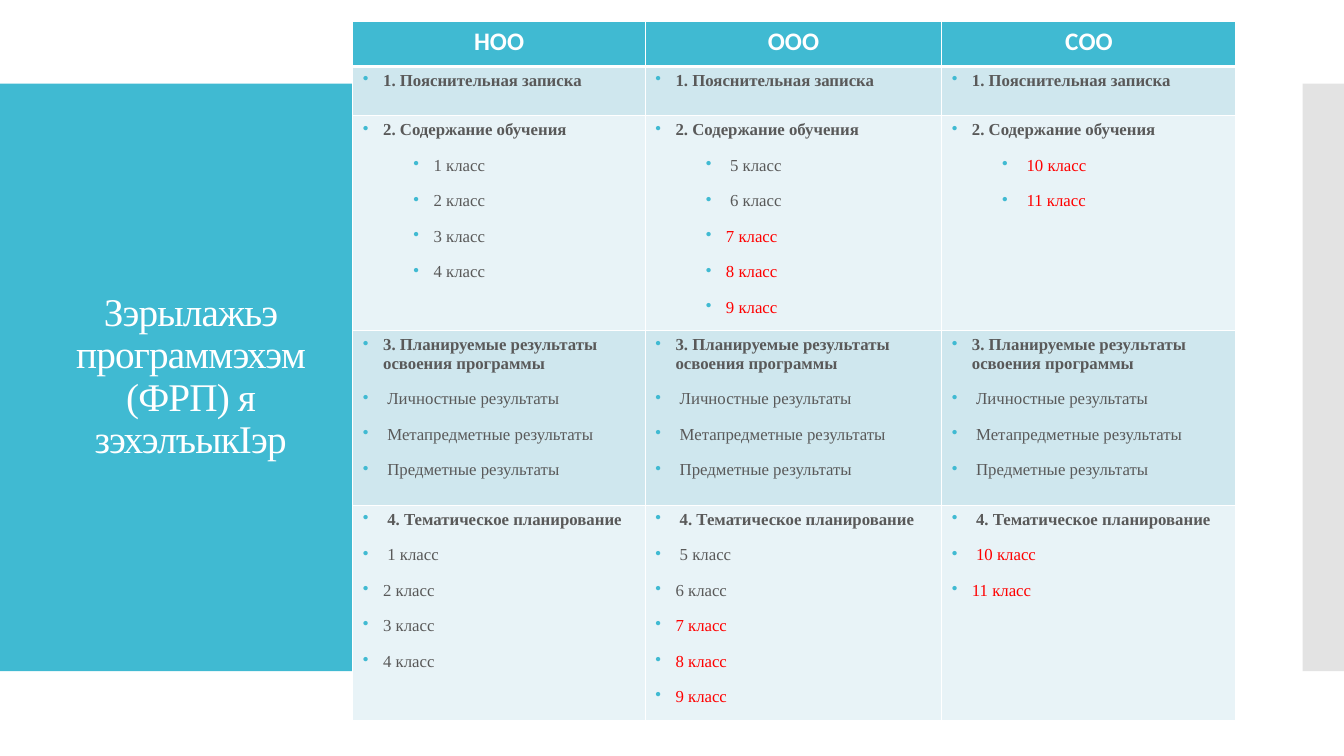
from lxml import etree
from pptx import Presentation
from pptx.dml.color import RGBColor
from pptx.enum.shapes import MSO_SHAPE
from pptx.enum.text import MSO_ANCHOR, PP_ALIGN
from pptx.oxml.ns import qn
from pptx.util import Inches, Pt

RECT = MSO_SHAPE.RECTANGLE
MIDDLE = MSO_ANCHOR.MIDDLE
CENTER = PP_ALIGN.CENTER
TEAL, WHITE, GREY, RED = "40BAD2", "FFFFFF", "595959", "FF0000"
DARK, LIGHT = "CFE7EE", "E8F3F7"
SERIF = "Times New Roman"


def color(code):
    return RGBColor.from_string(code)


def add(parent, tag, **attrs):
    """Append a DrawingML child element and return it."""
    return etree.SubElement(parent, qn("a:" + tag), attrs)


prs = Presentation()
prs.slide_width, prs.slide_height = Inches(13.33), Inches(7.5)
slide = prs.slides.add_slide(prs.slide_layouts[6])

# Side panels
for left, width, fill in [(0, 3.77, TEAL), (12.92, 0.41, "C8C8C8")]:
    panel = slide.shapes.add_shape(RECT, Inches(left), Inches(0.83), Inches(width), Inches(5.83))
    panel.shadow.inherit = False
    panel.fill.solid()
    panel.fill.fore_color.rgb = color(fill)
    panel.line.fill.background()
# The right panel is half transparent
tint = panel.fill._xPr.find(qn("a:solidFill"))[0]
add(tint, "alpha", val="50000")

# Title
title = slide.shapes.add_textbox(Inches(0.28), Inches(1.23), Inches(3.22), Inches(5.03))
frame = title.text_frame
frame.word_wrap = True
frame.vertical_anchor = MIDDLE
frame.text = "Зэрылажьэ программэхэм (ФРП) я зэхэлъыкIэр"
para = frame.paragraphs[0]
para.alignment = CENTER
para.line_spacing = 0.9
run = para.runs[0]
run.font.name, run.font.size = SERIF, Pt(28)
run.font.color.rgb = color(WHITE)
run._r.get_or_add_rPr().set("spc", "-60")

# Table content: the first line of each body cell is its bold heading
levels = ["НОО", "ООО", "СОО"]
intro = ["1. Пояснительная записка"]
results = [
    "3. Планируемые результаты освоения программы",
    " Личностные результаты",
    " Метапредметные результаты",
    " Предметные результаты",
]
topic = "2. Содержание обучения"
plan = " 4. Тематическое планирование"
rows = [
    [[name] for name in levels],
    [intro] * 3,
    [
        [topic, "1 класс", "2 класс", "3 класс", "4 класс"],
        [topic, " 5 класс", " 6 класс", "7 класс", "8 класс", "9 класс"],
        [topic, " 10 класс", " 11 класс"],
    ],
    [results] * 3,
    [
        [plan, " 1 класс", "2 класс", "3 класс", "4 класс"],
        [plan, " 5 класс", "6 класс", "7 класс", "8 класс", "9 класс"],
        [plan, " 10 класс", "11 класс"],
    ],
]
late = {f"{grade} класс" for grade in range(7, 12)}
widths = [2.9, 2.94, 2.92]
heights = [0.45, 0.49, 2.04, 1.73, 2.04]
fills = [TEAL, DARK, LIGHT, DARK, LIGHT]

table = slide.shapes.add_table(
    5, 3, Inches(3.5), Inches(0.21), Inches(sum(widths)), Inches(sum(heights))
).table
for col, width in zip(table.columns, widths):
    col.width = Inches(width)

for i, texts in enumerate(rows):
    table.rows[i].height = Inches(heights[i])
    for j, lines in enumerate(texts):
        cell = table.cell(i, j)
        props = cell._tc.get_or_add_tcPr()
        for side in ("lnL", "lnR", "lnT", "lnB"):
            thick = (i, side) in [(0, "lnB"), (1, "lnT")]
            edge = add(props, side, w=str(Pt(3 if thick else 1)))
            add(add(edge, "solidFill"), "srgbClr", val=WHITE)
        cell.fill.solid()
        cell.fill.fore_color.rgb = color(fills[i])

        cell.text_frame.text = "\n".join(lines)
        for k, para in enumerate(cell.text_frame.paragraphs):
            font = para.runs[0].font
            font.bold = k == 0
            if i == 0:
                para.alignment = CENTER
                font.name, font.size = "Calibri", Pt(18)
                font.color.rgb = color(WHITE)
                continue
            font.name, font.size = SERIF, Pt(12)
            font.color.rgb = color(RED if para.text.strip() in late else GREY)
            nested = i == 2 and k > 0
            para.level = int(nested)
            para.space_before = Pt(12)
            props = para._p.get_or_add_pPr()
            props.set("marL", str(Inches(0.7 if nested else 0.2)))
            props.set("indent", str(Inches(-0.2)))
            add(add(props, "buClr"), "srgbClr", val=TEAL)
            add(props, "buChar", char="•")

prs.save("out.pptx")
